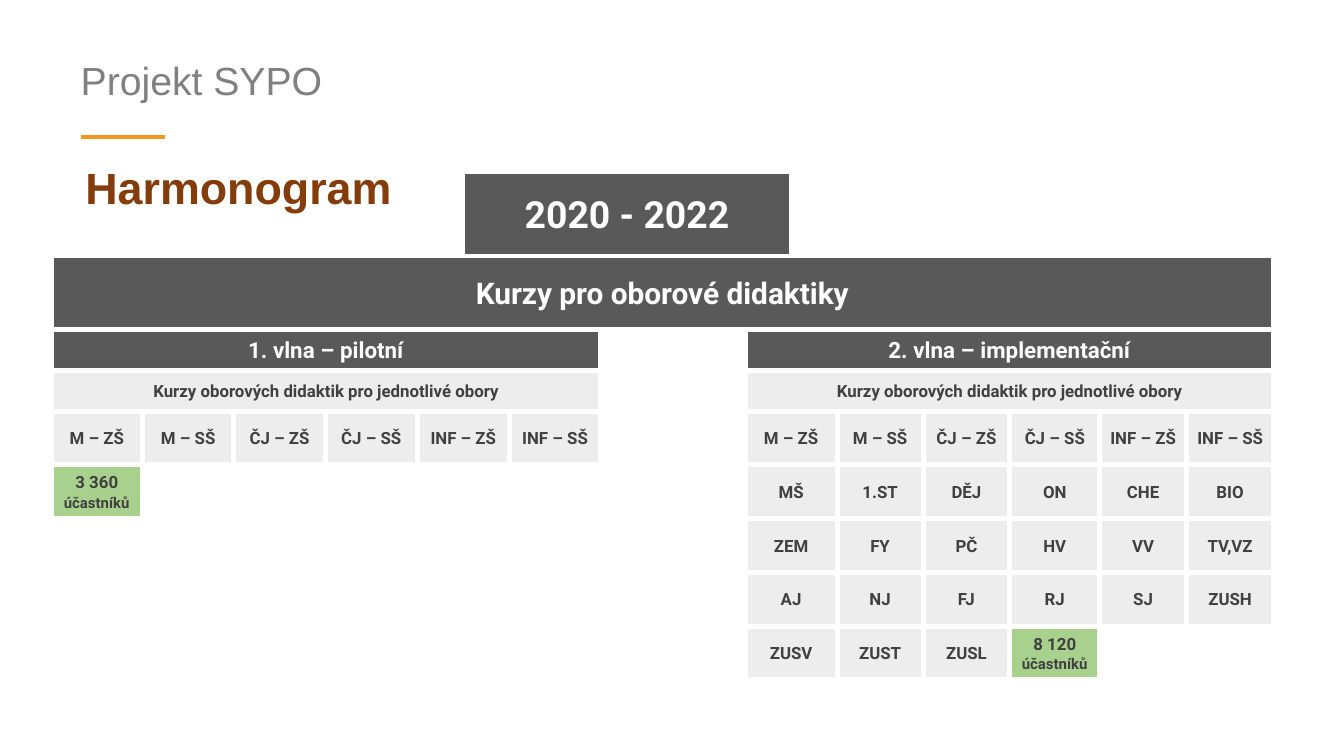
from dataclasses import dataclass

from lxml.etree import SubElement
from pptx import Presentation
from pptx.dml.color import RGBColor
from pptx.enum.shapes import MSO_CONNECTOR
from pptx.enum.text import MSO_ANCHOR, PP_ALIGN
from pptx.oxml.ns import qn
from pptx.util import Pt

EMU_PER_PX = 4572


@dataclass(frozen=True)
class Theme:
    """Colours, fonts and type sizes of the slide."""
    white: str = "FFFFFF"
    grey: str = "808080"
    brown: str = "843C0B"
    orange: str = "F4971D"
    dark: str = "595959"
    light: str = "EDEDED"
    green: str = "A9D18E"
    ink: str = "404040"
    head_font: str = "Arial"
    table_font: str = "Roboto"
    title: int = 21
    subtitle: int = 24
    period: int = 20
    course: int = 16
    wave: int = 12
    subject: int = 9
    unit: int = 8


T = Theme()
COLS = [136, 136, 136, 137, 68, 69, 136, 215, 69, 68, 128, 129, 134, 129, 130]
ROWS = [125, 109, 61, 61] + [80] * 5
PILOT_COLS = [0, 1, 2, 3, 4, 6]
ROLLOUT_COLS = [8, 10, 11, 12, 13, 14]
PAIRED_COLS = (4, 8)
FIRST_SUBJECT_ROW = 4
COURSES = "Kurzy oborových didaktik pro jednotlivé obory"
BASE = ["M – ZŠ", "M – SŠ", "ČJ – ZŠ", "ČJ – SŠ", "INF – ZŠ", "INF – SŠ"]
PILOT = [BASE]
ROLLOUT = [
    BASE,
    ["MŠ", "1.ST", "DĚJ", "ON", "CHE", "BIO"],
    ["ZEM", "FY", "PČ", "HV", "VV", "TV,VZ"],
    ["AJ", "NJ", "FJ", "RJ", "SJ", "ZUSH"],
    ["ZUSV", "ZUST", "ZUSL"],
]


def px(n):
    """Turn px into EMU."""
    return n * EMU_PER_PX


def add_run(p, text, size, color, font, bold=False):
    """Add one formatted run to a paragraph."""
    r = p.add_run()
    r.text = text
    r.font.size = Pt(size)
    r.font.name = font
    r.font.bold = bold
    r.font.color.rgb = RGBColor.from_string(color)


def fill_frame(s, text, size, color, spacing, bold=False):
    """Write one heading line into a shape's text frame."""
    tf = s.text_frame
    tf.word_wrap = True
    tf.vertical_anchor = MSO_ANCHOR.TOP
    tf.margin_left = tf.margin_right = tf.margin_top = tf.margin_bottom = px(10)
    p = tf.paragraphs[0]
    p.alignment = PP_ALIGN.LEFT
    p.line_spacing = spacing
    add_run(p, text, size, color, T.head_font, bold)


def add_heading(slide, x, y, w):
    """Place the title, its accent rule and the subtitle."""
    title = slide.shapes.title
    title.left, title.top, title.width, title.height = map(px, (x, y, w, 132))
    fill_frame(title, "Projekt SYPO", T.title, T.grey, 1.08)

    rule = slide.shapes.add_connector(
        MSO_CONNECTOR.STRAIGHT, px(x + 11), px(y + 136), px(x + 136), px(y + 136))
    rule.line.color.rgb = RGBColor.from_string(T.orange)
    rule.line.width = Pt(2)
    SubElement(rule._element.spPr, qn("a:effectLst"))

    sub = slide.shapes.add_textbox(px(x + 7), px(y + 144), px(1316), px(110))
    fill_frame(sub, "Harmonogram", T.subtitle, T.brown, 1.2, True)


def style_cell(cell):
    """Clear a cell and give it white borders."""
    cell.fill.background()
    cell.vertical_anchor = MSO_ANCHOR.MIDDLE
    cell.margin_left = cell.margin_right = px(14)
    cell.margin_top = cell.margin_bottom = 0
    tcPr = cell._tc.get_or_add_tcPr()
    for i, side in enumerate(("a:lnL", "a:lnR", "a:lnT", "a:lnB")):
        ln = tcPr.makeelement(qn(side), {"w": str(Pt(3))})
        fill = SubElement(ln, qn("a:solidFill"))
        SubElement(fill, qn("a:srgbClr"), val=T.white)
        tcPr.insert(i, ln)


def fill_cell(cell, paragraphs, fill, color):
    """Fill a cell and write paragraphs made of (text, size) runs."""
    cell.fill.solid()
    cell.fill.fore_color.rgb = RGBColor.from_string(fill)
    tf = cell.text_frame
    for i, runs in enumerate(paragraphs):
        p = tf.add_paragraph() if i else tf.paragraphs[0]
        p.alignment = PP_ALIGN.CENTER
        p.line_spacing = 1.07
        for text, size in runs:
            add_run(p, text, size, color, T.table_font, True)


def merge_right(table, row, col, count):
    """Merge cells along a row and return the first one."""
    cell = table.cell(row, col)
    cell.merge(table.cell(row, col + count - 1))
    return cell


def add_wave(table, col, name, columns, subjects):
    """Write one wave: its two headers and its grid of subjects."""
    fill_cell(merge_right(table, 2, col, 7), [[(name, T.wave)]], T.dark, T.white)
    fill_cell(merge_right(table, 3, col, 7), [[(COURSES, T.subject)]],
              T.light, T.ink)
    for row, names in enumerate(subjects, FIRST_SUBJECT_ROW):
        for c, subject in zip(columns, names):
            fill_cell(table.cell(row, c), [[(subject, T.subject)]],
                      T.light, T.ink)


def add_schedule(slide, x, y):
    """Place the timetable of both course waves."""
    frame = slide.shapes.add_table(
        len(ROWS), len(COLS), px(x), px(y), px(sum(COLS)), px(sum(ROWS)))
    table = frame.table
    table.first_row = table.horz_banding = False
    for column, w in zip(table.columns, COLS):
        column.width = px(w)
    for row, h in zip(table.rows, ROWS):
        row.height = px(h)
    for cell in table.iter_cells():
        style_cell(cell)

    merge_right(table, 0, 0, 5)
    merge_right(table, 0, 9, 6)
    table.cell(2, 7).merge(table.cell(4, 7))
    for row in range(FIRST_SUBJECT_ROW, len(ROWS)):
        for col in PAIRED_COLS:
            merge_right(table, row, col, 2)

    fill_cell(merge_right(table, 0, 5, 4), [[("2020 - 2022", T.period)]],
              T.dark, T.white)
    fill_cell(merge_right(table, 1, 0, len(COLS)),
              [[("Kurzy pro oborové didaktiky", T.course)]], T.dark, T.white)
    add_wave(table, 0, "1. vlna – pilotní", PILOT_COLS, PILOT)
    add_wave(table, 8, "2. vlna – implementační", ROLLOUT_COLS, ROLLOUT)
    unit = ("účastníků", T.unit)
    fill_cell(table.cell(5, 0), [[("3 360 ", T.subject), unit]], T.green, T.ink)
    fill_cell(table.cell(8, 12), [[("8 120", T.subject)], [unit]],
              T.green, T.ink)


def main():
    """Build and save the slide."""
    prs = Presentation()
    prs.slide_width, prs.slide_height = px(2000), px(1125)
    slide = prs.slides.add_slide(prs.slide_layouts[5])
    add_heading(slide, 110, 68, 1738)
    add_schedule(slide, 76, 256)
    prs.save("out.pptx")


if __name__ == "__main__":
    main()
